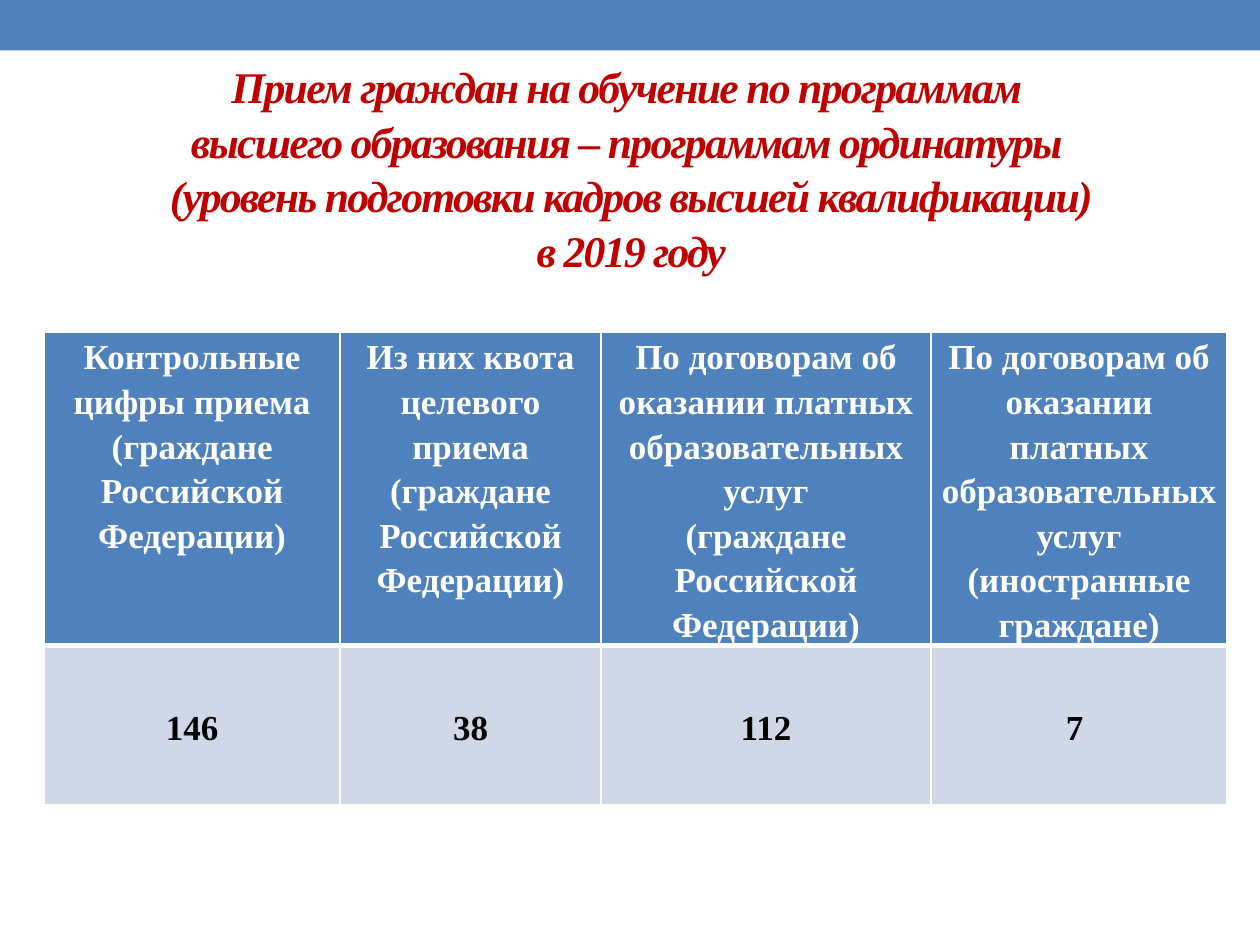
"""Build the residency admission slide."""
from lxml.etree import SubElement as Sub
from pptx import Presentation
from pptx.dml.color import RGBColor as RGB
from pptx.enum.shapes import MSO_SHAPE as Form
from pptx.enum.text import MSO_ANCHOR as Anchor, MSO_AUTO_SIZE as Fit, PP_ALIGN as Align
from pptx.oxml.ns import qn
from pptx.util import Inches, Pt

WIDE, HIGH = Inches(10), Inches(7.5)
HUES = {"blue": "4F81BD", "pale": "D0D8E8", "red": "C00000",
        "white": "FFFFFF", "black": "000000"}
FACE = {"name": "Times New Roman", "bold": True}
TITLE = ("Прием граждан на обучение по программам ",
         "высшего образования – программам ординатуры ",
         "(уровень подготовки кадров высшей квалификации)",
         "в 2019 году")
LOCAL = "(граждане Российской Федерации)"
PAID = "По договорам об оказании платных образовательных услуг"
HEADS = (("Контрольные цифры приема", LOCAL),
         ("Из них квота целевого приема", LOCAL),
         (PAID, LOCAL),
         (PAID, "(иностранные граждане)"))
COUNTS = (("146",), ("38",), ("112",), ("7 ",))
COLS = (2.35, 2.07, 2.62, 2.35)
ROWS = (2.47, 1.27)


def tint(hue):
    """Return the named colour."""
    return RGB.from_string(HUES[hue])


def apply(item, **form):
    """Set every format value on an item."""
    for key, value in form.items():
        setattr(item, key, value)


def style(par, hue, size, gap, **more):
    """Centre a paragraph and format its runs."""
    apply(par, alignment=Align.CENTER, line_spacing=gap)
    for run in par.runs:
        apply(run.font, size=Pt(size), **FACE, **more)
        run.font.color.rgb = tint(hue)


def add_band(slide):
    """Draw the band along the top edge."""
    band = slide.shapes.add_shape(Form.RECTANGLE, 0, 0, WIDE, Inches(0.4))
    band.shadow.inherit = False
    band.fill.solid()
    band.fill.fore_color.rgb = tint("blue")
    band.line.fill.background()


def add_title(slide):
    """Fill and place the title."""
    title = slide.shapes.title
    apply(title, left=Inches(0.51), top=Inches(0.99),
          width=Inches(9), height=Inches(1.08))
    frame = title.text_frame
    apply(frame, auto_size=Fit.NONE, word_wrap=True,
          vertical_anchor=Anchor.MIDDLE, margin_bottom=Inches(0.46))
    par = frame.paragraphs[0]
    par.text = "\v".join(TITLE)
    style(par, "red", 25, 1.04, italic=True)
    for run in par.runs:
        run.font._element.set("spc", "-100")


def add_edges(cell, base):
    """Give a cell white borders with the given base width."""
    props = cell._tc.get_or_add_tcPr()
    for side, size in zip("LRTB", (1, 1, 1, base)):
        line = Sub(props, qn(f"a:ln{side}"), w=str(Pt(size)))
        fill = Sub(line, qn("a:solidFill"))
        Sub(fill, qn("a:srgbClr"), val=HUES["white"])


def fill_cell(cell, lines, back, hue, anchor, base):
    """Write and format one cell."""
    add_edges(cell, base)
    cell.fill.solid()
    cell.fill.fore_color.rgb = tint(back)
    apply(cell, text="\n".join(lines), vertical_anchor=anchor,
          margin_left=Inches(0.07), margin_right=Inches(0.07),
          margin_top=0, margin_bottom=0)
    for par in cell.text_frame.paragraphs:
        style(par, hue, 20, 1.15)


def add_grid(slide):
    """Add the table of admission counts."""
    grid = slide.shapes.add_table(
        len(ROWS), len(COLS), Inches(0.35), Inches(2.64),
        Inches(sum(COLS)), Inches(sum(ROWS))).table
    for col, size in zip(grid.columns, COLS):
        col.width = Inches(size)
    for row, size in zip(grid.rows, ROWS):
        row.height = Inches(size)
    looks = ((HEADS, "blue", "white", Anchor.TOP, 3),
             (COUNTS, "pale", "black", Anchor.MIDDLE, 1))
    for row, (texts, *look) in zip(grid.rows, looks):
        for cell, lines in zip(row.cells, texts):
            fill_cell(cell, lines, *look)


def main():
    """Build and save the slide."""
    deck = Presentation()
    apply(deck, slide_width=WIDE, slide_height=HIGH)
    slide = deck.slides.add_slide(deck.slide_layouts[5])
    add_band(slide)
    add_title(slide)
    add_grid(slide)
    deck.save("out.pptx")


if __name__ == "__main__":
    main()
